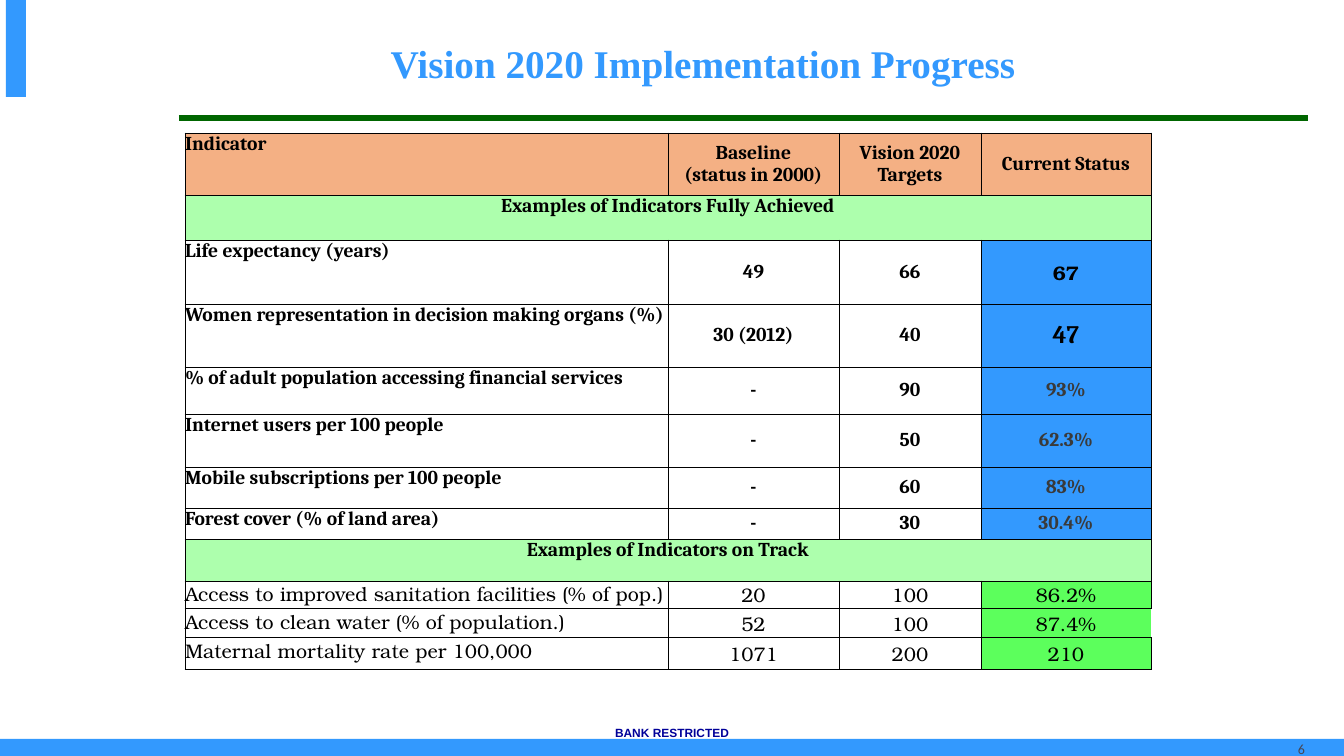
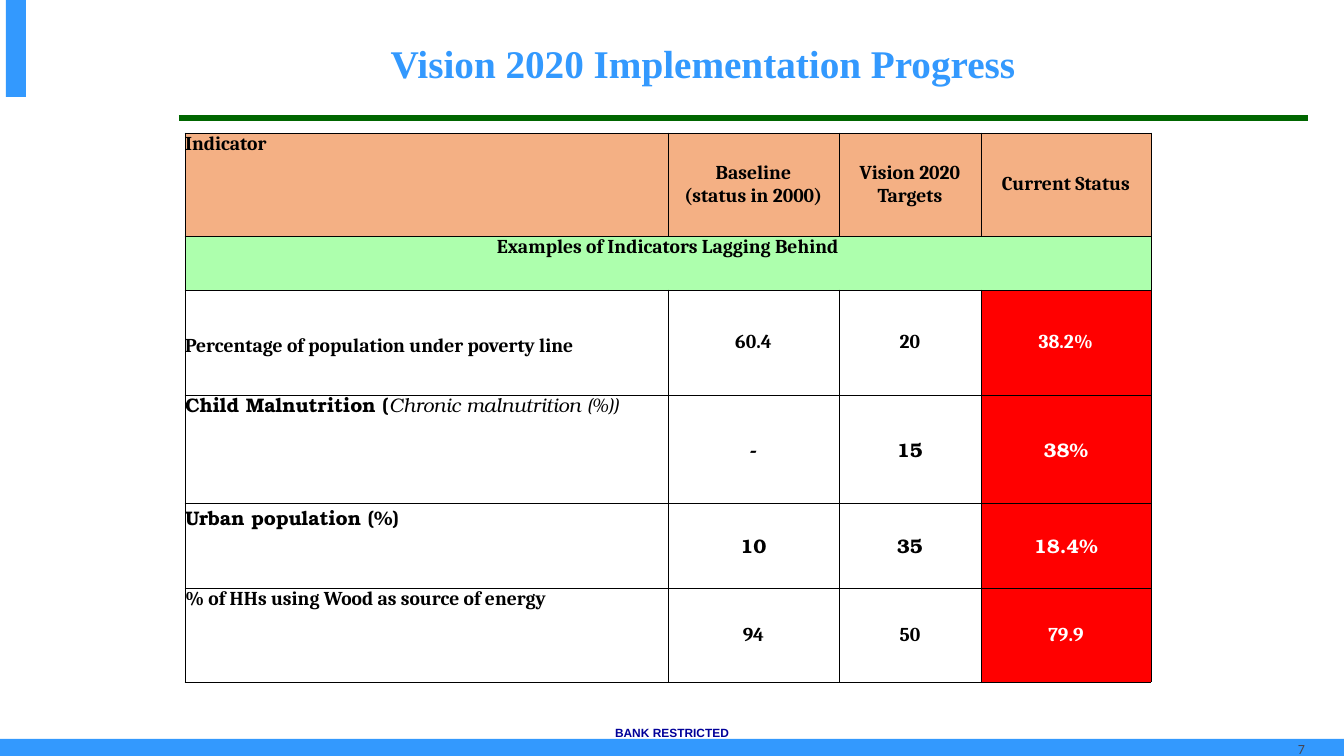
from dataclasses import dataclass, field

from lxml import etree
from pptx import Presentation
from pptx import util as u
from pptx.dml import color
from pptx.enum import shapes, text
from pptx.oxml import ns

# Shared look
EMU_PER_PX = 914400 / 100.8
WIDTH, HEIGHT = 1344, 756
BLUE, GREEN_RULE, NAVY, GREY = "3399FE", "006600", "000099", "464653"
BLACK, WHITE, DARK = "000000", "FFFFFF", "3A3A3A"
HEADER_FILL, SECTION_FILL = "F4B084", "ADFFAD"
TRACK_FILL, LAGGING_FILL = "5CFF5C", "FF0000"
BONUM = "TeX Gyre Bonum"

TABLE_LEFT, TABLE_TOP = 185, 133
COLUMNS = [483, 171, 142, 170]
HEADINGS = ["Indicator", "Baseline\n(status in 2000)", "Vision 2020 Targets", "Current Status"]
CENTER = text.PP_ALIGN.CENTER
MIDDLE = text.MSO_ANCHOR.MIDDLE
TOP = text.MSO_ANCHOR.TOP


@dataclass
class Row:
    """One table row; a row without values is a section band."""
    height: int
    label: object
    values: list = field(default_factory=list)
    fill: str = BLUE
    style: dict = field(default_factory=dict)
    status: dict = field(default_factory=dict)
    label_format: dict = field(default_factory=dict)
    label_top: int = 0
    open_right: bool = False


def px(length):
    return u.Emu(round(length * EMU_PER_PX))


def rgb(value):
    return color.RGBColor.from_string(value)


def write(frame, content, size=14, font="Cambria", ink=BLACK, bold=True,
          italic=False, align=None, spacing=None):
    """Write a string, or a list of (text, format) spans, into a frame."""
    frame.word_wrap = True
    lines = [[(line, {})] for line in content.split("\n")] if isinstance(content, str) else [content]
    for index, spans in enumerate(lines):
        para = frame.add_paragraph() if index else frame.paragraphs[0]
        para.alignment = align
        if spacing:
            para.line_spacing = u.Pt(spacing)
        for words, changes in spans:
            span = para.add_run()
            span.text = words
            span.font.size = u.Pt(size)
            span.font.name = font
            span.font.color.rgb = rgb(ink)
            span.font.bold = changes.get("bold", bold)
            span.font.italic = changes.get("italic", italic)


def add_text(page, content, left, top, width, height, anchor=TOP, **style):
    box = page.shapes.add_textbox(px(left), px(top), px(width), px(height))
    box.text_frame.vertical_anchor = anchor
    write(box.text_frame, content, **style)


def add_bar(page, left, top, width, height):
    bar = page.shapes.add_shape(shapes.MSO_SHAPE.RECTANGLE,
                                px(left), px(top), px(width), px(height))
    bar.shadow.inherit = False
    bar.fill.solid()
    bar.fill.fore_color.rgb = rgb(BLUE)
    bar.line.fill.background()


def add_rule(page, left, right, y):
    rule = page.shapes.add_connector(shapes.MSO_CONNECTOR.STRAIGHT,
                                     px(left), px(y), px(right), px(y))
    rule.line.color.rgb = rgb(GREEN_RULE)
    rule.line.width = u.Pt(4.5)
    etree.SubElement(rule.element.spPr, ns.qn("a:effectLst"))


def set_borders(cell, sides):
    properties = cell._tc.get_or_add_tcPr()
    for side in "LRTB":
        edge = etree.SubElement(properties, ns.qn("a:ln" + side), w=str(u.Pt(0.5)))
        if side in sides:
            paint = etree.SubElement(edge, ns.qn("a:solidFill"))
            etree.SubElement(paint, ns.qn("a:srgbClr"), val=BLACK)
        else:
            etree.SubElement(edge, ns.qn("a:noFill"))


def fill_cell(cell, content, fill=None, anchor=MIDDLE, top=0, **style):
    cell.margin_left = cell.margin_right = cell.margin_bottom = 0
    cell.margin_top = px(top)
    cell.vertical_anchor = anchor
    if fill:
        cell.fill.solid()
        cell.fill.fore_color.rgb = rgb(fill)
    else:
        cell.fill.background()
    write(cell.text_frame, content, **style)


def fill_row(cells, row):
    for index, cell in enumerate(cells):
        last = index == len(cells) - 1
        set_borders(cell, "LTB" if last and row.open_right else "LRTB")
    if not row.values:
        cells[0].merge(cells[-1])
        fill_cell(cells[0], row.label, SECTION_FILL, TOP, align=CENTER)
        return
    header = HEADER_FILL if row.fill == HEADER_FILL else None
    fill_cell(cells[0], row.label, header, TOP, row.label_top,
              **row.style, **row.label_format)
    for cell, value in zip(cells[1:-1], row.values):
        fill_cell(cell, value, header, align=CENTER, **row.style)
    fill_cell(cells[-1], row.values[-1], row.fill, align=CENTER, **{**row.style, **row.status})


def add_indicator_table(page, rows):
    heights = [row.height for row in rows]
    table = page.shapes.add_table(len(rows), len(COLUMNS), px(TABLE_LEFT), px(TABLE_TOP),
                                  px(sum(COLUMNS)), px(sum(heights))).table
    table.first_row = table.horz_banding = False
    for column, width in zip(table.columns, COLUMNS):
        column.width = px(width)
    for line, row in zip(table.rows, rows):
        line.height = px(row.height)
        fill_row(list(line.cells), row)


def add_page(deck, number, rows):
    page = deck.slides.add_slide(deck.slide_layouts[6])
    # Bands, rule and footer
    add_bar(page, 0, 739, WIDTH, 17)
    add_bar(page, 6, 0, 20, 97)
    add_text(page, "BANK RESTRICTED", 0, 721, WIDTH, 24,
             size=8.5, font="Arial", ink=NAVY, align=CENTER)
    add_rule(page, 179, 1308, 118)
    # Title and page number
    add_text(page, "Vision 2020 Implementation Progress", 269, 24, 868, 67,
             anchor=text.MSO_ANCHOR.BOTTOM, size=28, font="Times New Roman",
             ink=BLUE, align=CENTER)
    add_text(page, str(number), 1288, 736, 43, 26,
             size=10, font="Calibri", ink=GREY, bold=False)
    add_indicator_table(page, rows)


def heading(height):
    return Row(height, HEADINGS[0], HEADINGS[1:], HEADER_FILL)


def main():
    deck = Presentation()
    deck.slide_width, deck.slide_height = px(WIDTH), px(HEIGHT)

    # Row formats
    dark = {"ink": DARK}
    white = {"ink": WHITE}
    bonum = {"font": BONUM}
    track = {"fill": TRACK_FILL, "style": {"font": BONUM, "bold": False}}
    lagging = {"fill": LAGGING_FILL, "status": white}

    # Achieved and on track
    add_page(deck, 6, [
        heading(62),
        Row(45, "Examples of Indicators Fully Achieved"),
        Row(64, "Life expectancy (years)", ["49", "66", "67"], status=bonum),
        Row(63, "Women representation in decision making organs (%)",
            ["30 (2012)", "40", "47"], status={"size": 18}),
        Row(47, "% of adult population accessing financial services",
            ["-", "90", "93%"], status=dark),
        Row(53, "Internet users per 100 people", ["-", "50", "62.3%"], status=dark),
        Row(41, "Mobile subscriptions per 100 people", ["-", "60", "83%"], status=dark),
        Row(31, "Forest cover (% of land area)", ["-", "30", "30.4%"], status=dark),
        Row(42, "Examples of Indicators on Track"),
        Row(28, "Access to improved sanitation facilities (% of pop.)",
            ["20", "100", "86.2%"], **track),
        Row(29, "Access to clean water (% of population.)",
            ["52", "100", "87.4%"], open_right=True, **track),
        Row(32, "Maternal mortality rate per 100,000", ["1071", "200", "210"], **track),
    ])

    # Lagging behind
    add_page(deck, 7, [
        heading(103),
        Row(54, "Examples of Indicators Lagging Behind"),
        Row(105, "Percentage of population under poverty line",
            ["60.4", "20", "38.2%"], label_top=45, **lagging),
        Row(108, [("Child Malnutrition (", {}),
                  ("Chronic malnutrition (%))", {"bold": False, "italic": True})],
            ["-", "15", "38%"], style=bonum, label_format={"spacing": 16.8}, **lagging),
        Row(85, "Urban population (%)", ["10", "35", "18.4%"], style=bonum, **lagging),
        Row(94, "% of HHs using Wood as source of energy", ["94", "50", "79.9"], **lagging),
    ])
    deck.save("out.pptx")


if __name__ == "__main__":
    main()
